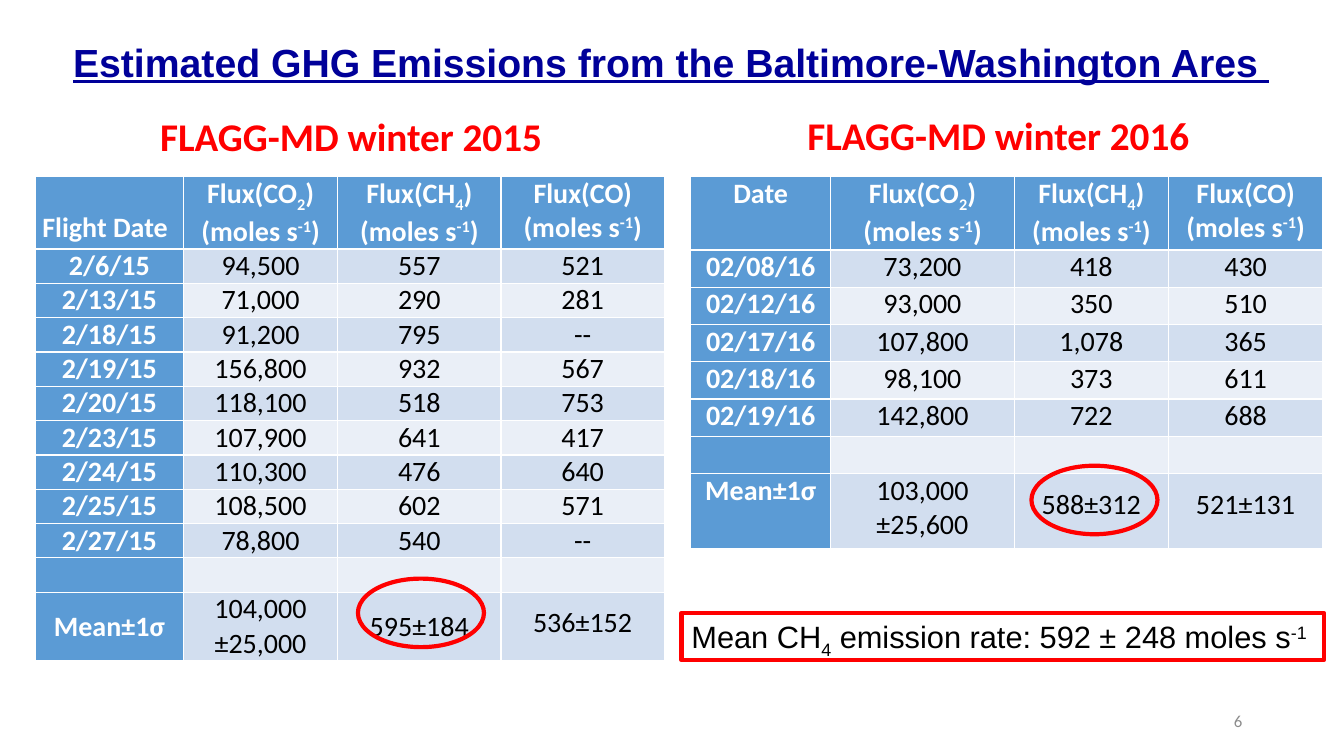
from pptx import Presentation
from pptx.dml.color import RGBColor
from pptx.enum.shapes import MSO_SHAPE as Kind
from pptx.enum.text import MSO_ANCHOR as Anchor, PP_ALIGN as Align
from pptx.util import Inches, Pt

INK = {"navy": "000099", "red": "FF0000", "white": "FFFFFF", "black": "000000",
       "gray": "8C8C8C", "blue": "5B9BD5", "odd": "D2DEEF", "even": "EAEFF7"}

RATE = "\n(moles s|^-1|)"
FLUX = ["Flux(CO|_2|)" + RATE, "Flux(CH|_4|)" + RATE, "Flux(CO)" + RATE]
BLANK = ["", "", "", ""]
MEAN = "Mean±1σ"

WINTER15 = [
    ["Flight Date", *FLUX],
    ["2/6/15", "94,500", "557", "521"],
    ["2/13/15", "71,000", "290", "281"],
    ["2/18/15", "91,200", "795", "--"],
    ["2/19/15", "156,800", "932", "567"],
    ["2/20/15", "118,100", "518", "753"],
    ["2/23/15", "107,900", "641", "417"],
    ["2/24/15", "110,300", "476", "640"],
    ["2/25/15", "108,500", "602", "571"],
    ["2/27/15", "78,800", "540", "--"],
    BLANK,
    [MEAN, "104,000\n±25,000", "595±184", "536±152"],
]
WINTER16 = [
    ["Date", *FLUX],
    ["02/08/16", "73,200", "418", "430"],
    ["02/12/16", "93,000", "350", "510"],
    ["02/17/16", "107,800", "1,078", "365"],
    ["02/18/16", "98,100", "373", "611"],
    ["02/19/16", "142,800", "722", "688"],
    BLANK,
    [MEAN, "103,000\n±25,600", "588±312", "521±131"],
]
TABLES = [
    (WINTER16, 6.85, [1.39, 1.82, 1.53, 1.53], 0.73, 0.37),
    (WINTER15, 0.35, [1.47, 1.53, 1.62, 1.62], 0.72, 0.34),
]
TITLE = "Estimated GHG Emissions from the Baltimore-Washington Ares "
TEXTS = [
    (TITLE, (0.35, 0.18, 12.61, 0.72), 28, "navy", "Arial", True, Align.CENTER, Anchor.BOTTOM),
    ("FLAGG-MD winter 2015", (1.49, 1.07, 4.47, 0.57), 28, "red", "Calibri", True, Align.LEFT, Anchor.TOP),
    ("FLAGG-MD winter 2016", (7.91, 1.06, 4.16, 0.57), 28, "red", "Calibri", True, Align.LEFT, Anchor.TOP),
    ("6", (9.42, 6.95, 3, 0.4), 12, "gray", "Calibri", False, Align.RIGHT, Anchor.MIDDLE),
]
NOTE = "Mean CH|_4| emission rate: 592 ± 248 moles s|^-1"
RINGS = [(3.55, 5.74), (10.23, 4.62)]
SHIFT = {"_": "-25000", "^": "30000"}


def color(name):
    return RGBColor.from_string(INK[name])


def write(frame, text, size, ink, face, bold, align):
    for i, line in enumerate(text.split("\n")):
        para = frame.paragraphs[0] if i == 0 else frame.add_paragraph()
        para.alignment = align
        for part in line.split("|"):
            if not part:
                continue
            run = para.add_run()
            run.text = part.lstrip("_^")
            font = run.font
            font.size, font.name, font.bold = Pt(size), face, bold
            font.color.rgb = color(ink)
            if part[0] in SHIFT:
                run._r.get_or_add_rPr().set("baseline", SHIFT[part[0]])


def outline(slide, kind, box):
    shape = slide.shapes.add_shape(kind, *map(Inches, box))
    shape.shadow.inherit = False
    shape.fill.background()
    shape.line.color.rgb = color("red")
    shape.line.width = Pt(3)
    return shape


def add_grid(slide, rows, left, widths, head, step):
    last = len(rows) - 1
    tops = [head] + [step] * (last - 1) + [2 * step]
    box = map(Inches, (left, 1.75, sum(widths), sum(tops)))
    grid = slide.shapes.add_table(len(rows), len(widths), *box).table
    grid.first_col = True
    for c, width in enumerate(widths):
        grid.columns[c].width = Inches(width)
    for r, row in enumerate(rows):
        grid.rows[r].height = Inches(tops[r])
        for c, text in enumerate(row):
            cell = grid.cell(r, c)
            label = r == 0 or c == 0
            cell.margin_left = cell.margin_right = Inches(0.07)
            cell.margin_top = cell.margin_bottom = 0
            cell.fill.solid()
            cell.fill.fore_color.rgb = color("blue" if label else "odd" if r % 2 else "even")
            align = Align.CENTER
            if text == "Flight Date":
                cell.margin_top, align = Inches(0.34), Align.LEFT
            elif r == last and rows is WINTER15 and c < 3:
                cell.vertical_anchor = Anchor.MIDDLE
            elif r == last and c > 1:
                cell.margin_top = Inches(0.14)
            write(cell.text_frame, text, 20, "white" if label else "black", "Calibri", label, align)


def main():
    deck = Presentation()
    deck.slide_width, deck.slide_height = Inches(13.33), Inches(7.5)
    slide = deck.slides.add_slide(deck.slide_layouts[6])

    for table in TABLES:
        add_grid(slide, *table)
    for ring in RINGS:
        outline(slide, Kind.OVAL, (*ring, 1.25, 0.68))
    for text, box, size, ink, face, bold, align, anchor in TEXTS:
        frame = slide.shapes.add_textbox(*map(Inches, box)).text_frame
        frame.word_wrap = True
        frame.vertical_anchor = anchor
        write(frame, text, size, ink, face, bold, align)
        if text == TITLE:
            para = frame.paragraphs[0]
            para.line_spacing = 0.9
            para.runs[0].font.underline = True

    frame = outline(slide, Kind.RECTANGLE, (6.76, 6.08, 6.37, 0.47)).text_frame
    frame.word_wrap = True
    frame.vertical_anchor = Anchor.TOP
    write(frame, NOTE, 22, "black", "Arial", False, Align.LEFT)
    deck.save("out.pptx")


if __name__ == "__main__":
    main()
